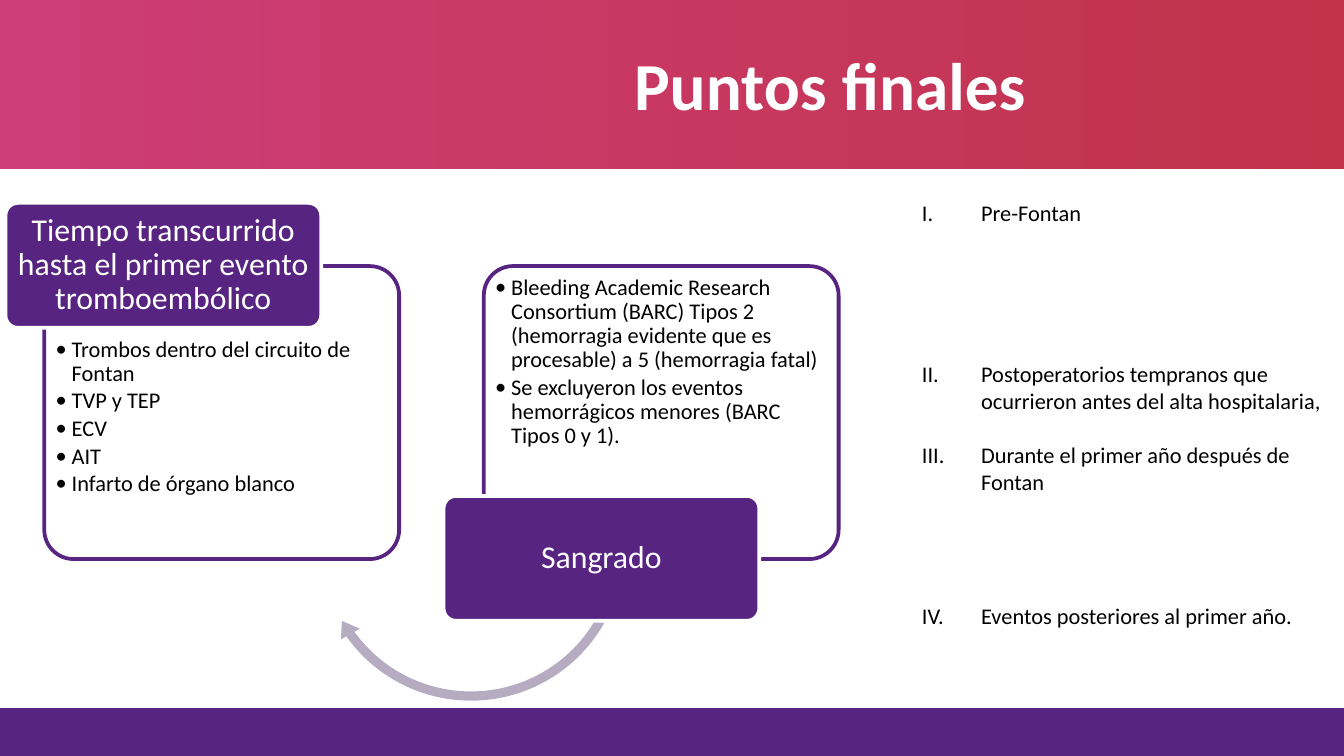
"""Build the study endpoints slide."""
from pptx import Presentation, util as u
from pptx.dml import color
from pptx.enum import shapes, text
from pptx.oxml import ns
from lxml import etree

TITLE = "Puntos finales"
CARDS = [
    {"label": "Tiempo transcurrido hasta el primer evento tromboembólico",
     "panel": (0.33, 1.98), "tag": (0.04, 1.51), "top": 0.47,
     "items": ["Trombos dentro del circuito de Fontan", "TVP y TEP", "ECV", "AIT",
               "Infarto de órgano blanco"]},
    {"label": "Sangrado",
     "panel": (3.6, 1.98), "tag": (3.3, 3.69), "top": 0.01,
     "items": ["Bleeding Academic Research Consortium (BARC) Tipos 2 "
               "(hemorragia evidente que es procesable) a 5 (hemorragia fatal)",
               "Se excluyeron los eventos hemorrágicos menores (BARC Tipos 0 y 1)."]},
]
STAGES = [
    ("Pre-Fontan", 0),
    ("Postoperatorios tempranos que ocurrieron antes del alta hospitalaria,", 5),
    ("Durante el primer año después de Fontan", 1),
    ("Eventos posteriores al primer año.", 4),
]
PURPLE, WHITE, BLACK, MAUVE = "582481", "FFFFFF", "000000", "B5ACC1"
PINK, RED = "CD3E79", "C23249"
PANEL, TAG = (2.64, 2.18), (2.35, 0.93)
LINE = 14.4
DOT = [("a:buFont", {"typeface": "Calibri"}), ("a:buChar", {"char": "•"})]
ROMAN = [("a:buAutoNum", {"type": "romanUcPeriod"})]
KIND = shapes.MSO_SHAPE
ALIGN, ANCHOR = text.PP_ALIGN, text.MSO_ANCHOR


def rgb(code):
    """Turn a hex string into a colour."""
    return color.RGBColor.from_string(code)


def assign(obj, vals):
    """Set attributes from a dict."""
    for name, val in vals.items():
        setattr(obj, name, val)


def place(obj, box):
    """Move and size a shape in inches."""
    assign(obj, dict(zip(("left", "top", "width", "height"), map(u.Inches, box))))


def draw(slide, kind, box, fill, line=None, adj=()):
    """Add a flat preset shape."""
    shape = slide.shapes.add_shape(kind, *map(u.Inches, box))
    shape.shadow.inherit = False
    shape.fill.solid()
    shape.fill.fore_color.rgb = rgb(fill)
    if line:
        shape.line.color.rgb = rgb(line)
        shape.line.width = u.Pt(2)
    else:
        shape.line.fill.background()
    for i, val in enumerate(adj):
        shape.adjustments[i] = val
    return shape


def setup(frame, anchor, pads):
    """Set wrapping, anchor and margins of a text frame."""
    names = ("margin_left", "margin_top", "margin_right", "margin_bottom")
    assign(frame, dict(zip(names, map(u.Inches, pads))))
    assign(frame, {"word_wrap": True, "auto_size": text.MSO_AUTO_SIZE.NONE,
                   "vertical_anchor": anchor})


def write(frame, rows, size, ink, para, bold=False, marks=(), indent=0):
    """Write (text, space before) rows, with optional bullets."""
    for i, (words, gap) in enumerate(rows):
        p = frame.paragraphs[0] if i == 0 else frame.add_paragraph()
        p.text = words
        assign(p, {"space_before": u.Pt(gap), **para})
        if marks:
            props = p._p.get_or_add_pPr()
            props.set("marL", str(u.Inches(indent)))
            props.set("indent", str(-u.Inches(indent)))
            for tag, attrs in marks:
                etree.SubElement(props, ns.qn(tag), attrs)
        assign(p.font, {"name": "Calibri", "size": u.Pt(size), "bold": bold})
        p.font.color.rgb = rgb(ink)


def add_card(slide, card):
    """Add an outlined list panel and its label."""
    panel = draw(slide, KIND.ROUNDED_RECTANGLE, card["panel"] + PANEL, WHITE, PURPLE, [0.1])
    setup(panel.text_frame, ANCHOR.TOP, (0.02, card["top"], 0.02, 0.02))
    write(panel.text_frame, [(item, 0) for item in card["items"]], 12, BLACK,
          {"alignment": ALIGN.LEFT, "line_spacing": 0.9, "space_after": u.Pt(1.8)},
          marks=DOT, indent=0.12)
    tag = draw(slide, KIND.ROUNDED_RECTANGLE, card["tag"] + TAG, PURPLE, WHITE, [0.1])
    setup(tag.text_frame, ANCHOR.MIDDLE, (0.04, 0.02, 0.04, 0.02))
    write(tag.text_frame, [(card["label"], 0)], 17, WHITE,
          {"alignment": ALIGN.CENTER, "line_spacing": 0.9})


def main():
    """Build and save the slide."""
    deck = Presentation()
    wide = u.Inches(10)
    assign(deck, {"slide_width": wide, "slide_height": wide * 9 // 16})
    slide = deck.slides.add_slide(deck.slide_layouts[1])
    title, body = slide.shapes.title, slide.placeholders[1]

    band = draw(slide, KIND.RECTANGLE, (-0.23, -0.17, 10.46, 1.43), PINK)
    band.fill.gradient()
    band.fill.gradient_angle = 0
    for stop, code in zip(band.fill.gradient_stops, (PINK, RED)):
        stop.color.rgb = rgb(code)
    foot = draw(slide, KIND.RECTANGLE, (-0.23, 5.27, 10.46, 0.36), PURPLE)
    tree = slide.shapes._spTree
    for shape in (foot, band):
        tree.insert(2, shape._element)

    place(title, (4.13, 0.21, 4.09, 0.83))
    setup(title.text_frame, ANCHOR.MIDDLE, (0.1,) * 4)
    write(title.text_frame, [(TITLE, 0)], 36, WHITE, {"alignment": ALIGN.CENTER}, bold=True)

    draw(slide, KIND.CIRCULAR_ARROW, (2.32, 2.89, 2.37, 2.37), MAUVE,
         adj=(0.029, 3.612, 86.633, 17.755, 0.034))
    for card in CARDS:
        add_card(slide, card)

    place(body, (6.76, 1.43, 3.41, 3.33))
    setup(body.text_frame, ANCHOR.TOP, (0.1, 0.05, 0.1, 0.05))
    write(body.text_frame, [(words, LINE * skip) for words, skip in STAGES], 12, BLACK,
          {"alignment": ALIGN.LEFT}, marks=ROMAN, indent=0.44)
    deck.save("out.pptx")


if __name__ == "__main__":
    main()
